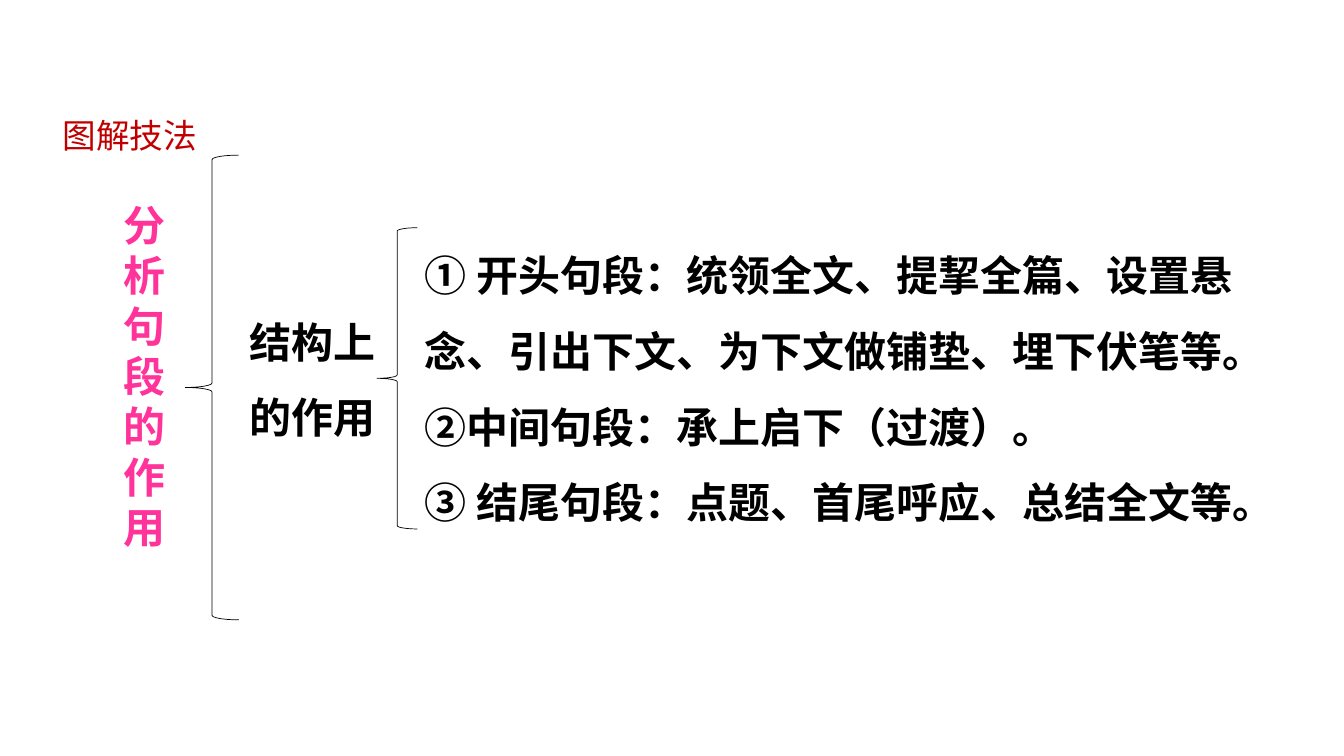
from lxml import etree
from pptx import Presentation
from pptx.dml.color import RGBColor
from pptx.enum.shapes import MSO_SHAPE
from pptx.enum.text import MSO_ANCHOR, MSO_AUTO_SIZE, PP_ALIGN
from pptx.oxml.ns import qn
from pptx.util import Cm, Pt

LEFT_BRACE = MSO_SHAPE.LEFT_BRACE
TOP = MSO_ANCHOR.TOP
NO_AUTOFIT = MSO_AUTO_SIZE.NONE
LEFT = PP_ALIGN.LEFT

RED = RGBColor(0xC0, 0x00, 0x00)
PINK = RGBColor(0xFF, 0x33, 0x99)
BLACK = RGBColor(0x00, 0x00, 0x00)

LATIN_FONT = "Arial"
CHINESE_FONT = "Noto Sans CJK SC"


class BraceDiagram:
    """Holds the slide and the style of a diagram that branches by braces."""

    def __init__(self, slide):
        self.slide = slide
        self.body_size = Pt(30)
        self.title_size = Pt(24)
        self.line_width = Pt(0.5)

    def fill_text(self, frame, text, size, color, font, bold, spacing):
        frame.text = text
        frame.word_wrap = True
        frame.auto_size = NO_AUTOFIT
        frame.vertical_anchor = TOP
        for paragraph in frame.paragraphs:
            paragraph.alignment = LEFT
            paragraph.line_spacing = spacing
            for run in paragraph.runs:
                run.font.size = size
                run.font.bold = bold
                run.font.name = font
                run.font.color.rgb = color
                east_asian = etree.SubElement(run.font._element, qn("a:ea"))
                east_asian.set("typeface", CHINESE_FONT)

    def title(self, text, left, top, width, height):
        heading = self.slide.shapes.title
        heading.left, heading.top = Cm(left), Cm(top)
        heading.width, heading.height = Cm(width), Cm(height)
        self.fill_text(heading.text_frame, text, self.title_size, RED,
                       CHINESE_FONT, False, 1.0)

    def branch(self, text, left, top, width, height, color=BLACK, spacing=1.5):
        box = self.slide.shapes.add_textbox(Cm(left), Cm(top), Cm(width), Cm(height))
        self.fill_text(box.text_frame, text, self.body_size, color,
                       LATIN_FONT, True, spacing)

    def brace(self, left, top, width, height):
        brace = self.slide.shapes.add_shape(
            LEFT_BRACE, Cm(left), Cm(top), Cm(width), Cm(height))
        brace.shadow.inherit = False
        brace.fill.background()
        brace.line.color.rgb = BLACK
        brace.line.width = self.line_width


def main():
    prs = Presentation()
    prs.slide_width, prs.slide_height = Cm(33.87), Cm(19.05)
    diagram = BraceDiagram(prs.slides.add_slide(prs.slide_layouts[5]))

    # Heading
    diagram.title("图解技法", 1.32, 2.77, 5.13, 1.27)

    # Topic, one character a line
    diagram.branch("分析句段的作用", 2.87, 4.9, 1.68, 9.25, color=PINK, spacing=1.0)
    diagram.brace(4.67, 3.91, 1.35, 11.71)

    # Structural role
    diagram.branch("结构上的作用", 6.05, 7.21, 4.09, 4.11)
    diagram.brace(9.5, 5.74, 1.02, 7.59)

    # Roles by position in the text
    roles = [
        "① 开头句段：统领全文、提挈全篇、设置悬念、引出下文、为下文做铺垫、埋下伏笔等。",
        "②中间句段：承上启下（过渡）。",
        "③ 结尾句段：点题、首尾呼应、总结全文等。",
    ]
    diagram.branch("\n".join(roles), 10.46, 5.54, 21.62, 7.95)

    prs.save("out.pptx")


if __name__ == "__main__":
    main()
